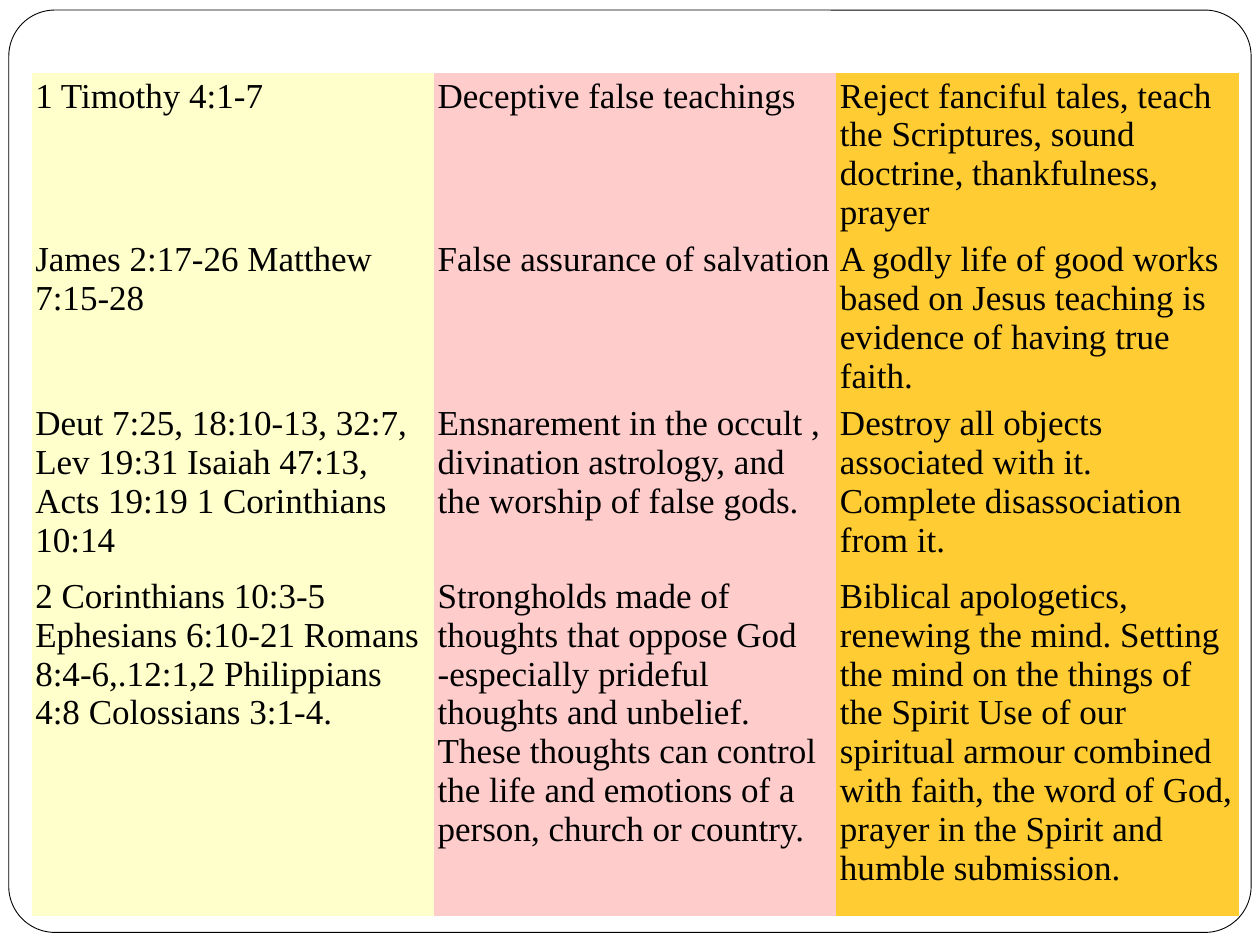
"""Build a slide with a three-column table of scriptures, dangers and remedies."""
from pptx import Presentation
from pptx.dml.color import RGBColor
from pptx.enum.shapes import MSO_SHAPE
from pptx.util import Inches, Pt


def color(value):
    return RGBColor.from_string(value)


presentation = Presentation()
presentation.slide_width = Inches(10)
presentation.slide_height = Inches(7.5)
slide = presentation.slides.add_slide(presentation.slide_layouts[6])

frame = slide.shapes.add_shape(
    MSO_SHAPE.ROUNDED_RECTANGLE, Inches(0.07), Inches(0.08), Inches(9.86), Inches(7.32)
)
frame.adjustments[0] = 0.05
frame.shadow.inherit = False
frame.fill.solid()
frame.fill.fore_color.rgb = color("FFFFFF")
frame.line.color.rgb = color("000000")
frame.line.width = Pt(0.5)

column_fills = ["FFFFCC", "FFCCCC", "FFCC33"]
row_heights = [1.3, 1.3, 1.37, 2.72]
rows = [
    [
        ["1 Timothy 4:1-7"],
        ["Deceptive false teachings"],
        ["Reject fanciful tales, teach the Scriptures, sound doctrine, thankfulness, prayer"],
    ],
    [
        ["James 2:17-26 Matthew 7:15-28"],
        ["False assurance of salvation"],
        ["A godly life of good works based on Jesus teaching is evidence of having true faith."],
    ],
    [
        ["Deut 7:25, 18:10-13, 32:7, Lev 19:31 Isaiah 47:13, Acts 19:19 1 Corinthians 10:14"],
        ["Ensnarement in the occult , divination astrology, and the worship of false gods."],
        ["Destroy all objects associated with it.", "Complete disassociation from it."],
    ],
    [
        ["2 Corinthians 10:3-5 Ephesians 6:10-21 Romans 8:4-6,.12:1,2 Philippians 4:8 "
         "Colossians 3:1-4."],
        ["Strongholds made of thoughts that oppose God -especially prideful thoughts and "
         "unbelief. These thoughts can control the life and emotions of a person, church "
         "or country."],
        ["Biblical apologetics, renewing the mind. Setting the mind on the things of the "
         "Spirit Use of our spiritual armour combined with faith, the word of God, prayer "
         "in the Spirit and humble submission."],
    ],
]

table = slide.shapes.add_table(
    len(rows), len(column_fills),
    Inches(0.25), Inches(0.58), Inches(9.58), Inches(sum(row_heights)),
).table
table.first_row = False
table.horz_banding = False
for column in table.columns:
    column.width = Inches(9.58 / len(column_fills))

for row_index, row_texts in enumerate(rows):
    table.rows[row_index].height = Inches(row_heights[row_index])
    for column_index, paragraph_texts in enumerate(row_texts):
        cell = table.cell(row_index, column_index)
        cell.fill.solid()
        cell.fill.fore_color.rgb = color(column_fills[column_index])
        cell.margin_left = cell.margin_right = Inches(0.03)
        cell.margin_top = cell.margin_bottom = Inches(0.03)
        for index, text in enumerate(paragraph_texts):
            text_frame = cell.text_frame
            paragraph = text_frame.add_paragraph() if index else text_frame.paragraphs[0]
            run = paragraph.add_run()
            run.text = text
            run.font.name = "Times New Roman"
            run.font.size = Pt(20)
            run.font.color.rgb = color("000000")

tableStyleId = table._tbl.tblPr.find(
    "{http://schemas.openxmlformats.org/drawingml/2006/main}tableStyleId"
)
tableStyleId.text = "{2D5ABB26-0587-4C30-8999-92F81FD0307C}"

presentation.save("out.pptx")
